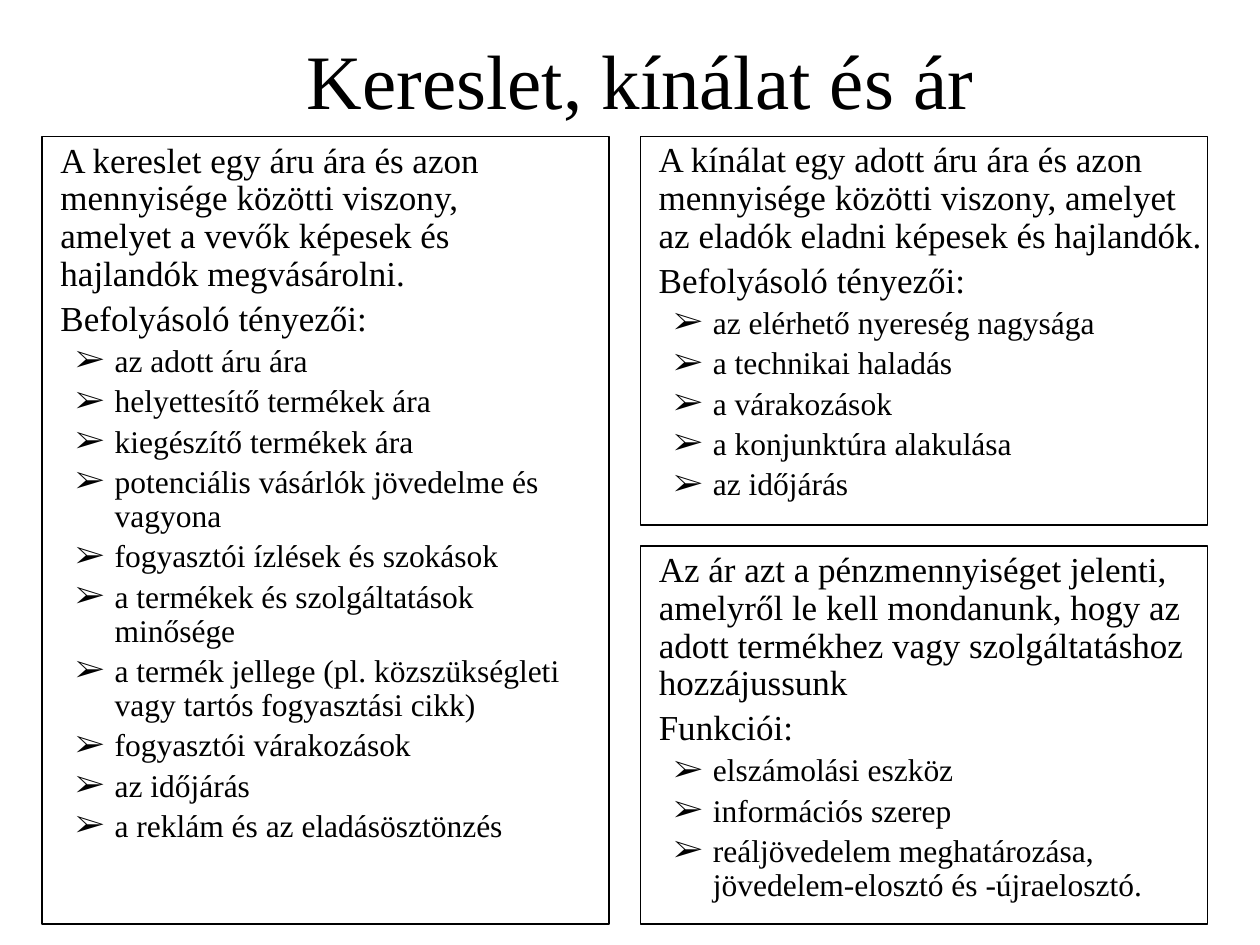
from lxml import etree
from pptx import Presentation, util as u
from pptx.dml.color import RGBColor
from pptx.enum import shapes, text
from pptx.oxml.ns import qn

BLACK = RGBColor(0, 0, 0)
FACE = "Times New Roman"
COLS, ROWS = 120, 90
WIDE, HIGH = u.Inches(10), u.Inches(7.5)

DEMAND = (
    ["A kereslet egy áru ára és azon mennyisége közötti viszony, amelyet a vevők "
     "képesek és hajlandók megvásárolni.", "Befolyásoló tényezői:"],
    ["az adott áru ára", "helyettesítő termékek ára", "kiegészítő termékek ára",
     "potenciális vásárlók jövedelme és vagyona", "fogyasztói ízlések és szokások",
     "a termékek és szolgáltatások minősége",
     "a termék jellege (pl. közszükségleti vagy tartós fogyasztási cikk)",
     "fogyasztói várakozások", "az időjárás", "a reklám és az eladásösztönzés"],
)
SUPPLY = (
    ["A kínálat egy adott áru ára és azon mennyisége közötti viszony, amelyet az "
     "eladók eladni képesek és hajlandók.", "Befolyásoló tényezői:"],
    ["az elérhető nyereség nagysága", "a technikai haladás", "a várakozások",
     "a konjunktúra alakulása", "az időjárás"],
)
PRICE = (
    ["Az ár azt a pénzmennyiséget jelenti, amelyről le kell mondanunk, hogy az adott "
     "termékhez vagy szolgáltatáshoz hozzájussunk", "Funkciói:"],
    ["elszámolási eszköz", "információs szerep",
     "reáljövedelem meghatározása, jövedelem-elosztó és -újraelosztó."],
)


def area(col, row, cols, rows):
    """Turn grid cells into left, top, width and height."""
    return (WIDE * col // COLS, HIGH * row // ROWS,
            WIDE * cols // COLS, HIGH * rows // ROWS)


def place(shape, cells):
    """Move a placeholder to its grid cells."""
    shape.left, shape.top, shape.width, shape.height = area(*cells)


def style(para, size):
    """Set the font of every run in a paragraph."""
    for run in para.runs:
        run.font.name, run.font.size = FACE, u.Pt(size)
        run.font.color.rgb = BLACK


def mark(para, left, hang, char=None):
    """Set the indent and the bullet of a paragraph."""
    props = para._p.get_or_add_pPr()
    props.set("marL", str(u.Inches(left)))
    props.set("indent", str(u.Inches(-hang)))
    if char:
        etree.SubElement(props, qn("a:buFont")).set("typeface", FACE)
        etree.SubElement(props, qn("a:buChar")).set("char", char)
    else:
        etree.SubElement(props, qn("a:buNone"))


def fill(shape, topic):
    """Write the lead paragraphs and the bulleted points of a topic."""
    leads, points = topic
    frame = shape.text_frame
    frame.text = "\n".join(leads + points)
    frame.word_wrap = True
    frame.auto_size = text.MSO_AUTO_SIZE.NONE
    frame.vertical_anchor = text.MSO_ANCHOR.TOP
    for num, para in enumerate(frame.paragraphs):
        lead = num < len(leads)
        size = 20 if lead else 18
        if lead:
            mark(para, 0.38, 0)
        else:
            para.level = 1
            mark(para, 0.81, 0.31, "➢")
        para.line_spacing = 0.9
        para.space_before = u.Pt(0.2 * size if num else 0)
        style(para, size)


def border(slide, cells):
    """Draw an empty box with a thin outline."""
    box = slide.shapes.add_shape(shapes.MSO_SHAPE.RECTANGLE, *area(*cells))
    box.shadow.inherit = False
    box.fill.background()
    box.line.color.rgb = BLACK
    box.line.width = u.Pt(0.75)


def head(shape, words):
    """Write the centred slide title."""
    place(shape, (10, 0, 102, 15))
    frame = shape.text_frame
    frame.text = words
    frame.auto_size = text.MSO_AUTO_SIZE.NONE
    frame.vertical_anchor = text.MSO_ANCHOR.MIDDLE
    frame.paragraphs[0].alignment = text.PP_ALIGN.CENTER
    style(frame.paragraphs[0], 44)


def main():
    """Build the slide and save it."""
    deck = Presentation()
    deck.slide_width, deck.slide_height = WIDE, HIGH
    slide = deck.slides.add_slide(deck.slide_layouts[1])
    head(slide.shapes.title, "Kereslet, kínálat és ár")
    body = slide.placeholders[1]
    place(body, (0, 13, 56, 54))
    fill(body, DEMAND)
    for cells in ((4, 13, 54, 75), (61, 13, 54, 37), (61, 52, 54, 36)):
        border(slide, cells)
    for cells, topic in (((57, 52, 57, 20), PRICE), ((57, 13, 59, 54), SUPPLY)):
        fill(slide.shapes.add_textbox(*area(*cells)), topic)
    deck.save("out.pptx")


if __name__ == "__main__":
    main()
